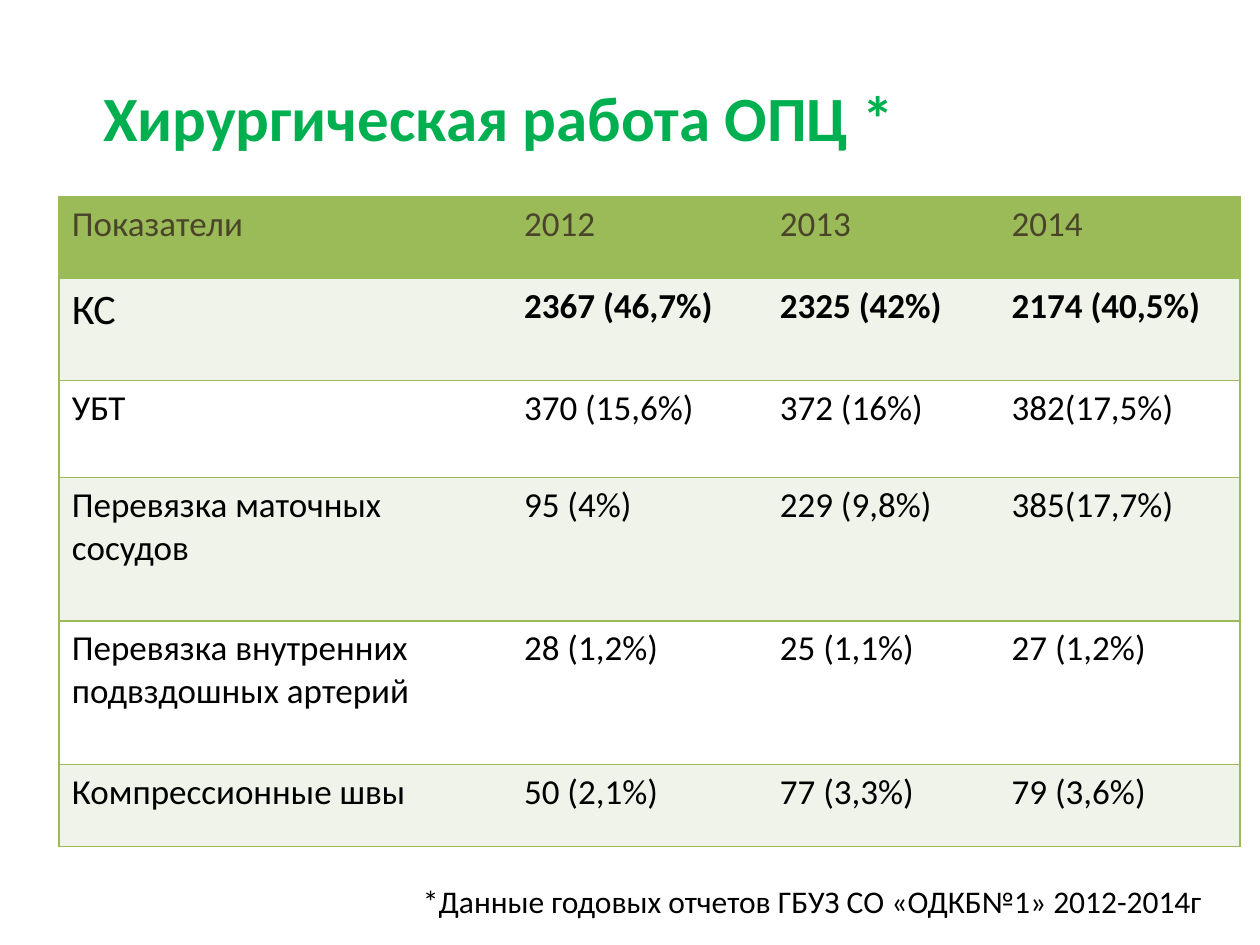
from lxml.etree import SubElement
from pptx import Presentation
from pptx.dml.color import RGBColor
from pptx.enum.text import MSO_ANCHOR, PP_ALIGN
from pptx.oxml.ns import qn
from pptx.util import Inches, Pt

TITLE_GREEN = RGBColor(0x00, 0xB0, 0x50)
TABLE_GREEN = RGBColor(0x9B, 0xBB, 0x59)
PALE_GREEN = RGBColor(0xEF, 0xF3, 0xEA)
HEADER_BROWN = RGBColor(0x4A, 0x45, 0x2A)
BLACK = RGBColor(0, 0, 0)
WHITE = RGBColor(255, 255, 255)

INDICATORS = [
    ("Показатели", "2012", "2013", "2014"),
    ("КС", "2367 (46,7%)", "2325 (42%)", "2174 (40,5%)"),
    ("УБТ", "370 (15,6%)", "372 (16%)", "382(17,5%)"),
    ("Перевязка маточных сосудов", "95 (4%)", "229 (9,8%)", "385(17,7%)"),
    ("Перевязка внутренних подвздошных артерий", "28 (1,2%)", "25 (1,1%)", "27 (1,2%)"),
    ("Компрессионные швы", "50 (2,1%)", "77 (3,3%)", "79 (3,6%)"),
]
COLUMN_WIDTHS = [3.59, 2.03, 1.84, 1.91]
ROW_HEIGHTS = [0.65, 0.81, 0.77, 1.14, 1.14, 0.65]


def write(frame, text, size=20, color=BLACK, bold=False, align=PP_ALIGN.LEFT):
    paragraph = frame.paragraphs[0]
    paragraph.alignment = align
    run = paragraph.add_run()
    run.text = text
    run.font.name = "Calibri"
    run.font.size = Pt(size)
    run.font.bold = bold
    run.font.color.rgb = color


class SlideBuilder:
    """Holds the border style and the slide being built."""

    def __init__(self, slide, border_color=TABLE_GREEN, border_width=1):
        self.slide = slide
        self.border_color = border_color
        self.border_width = border_width

    def title(self, text, left, top, width, height):
        heading = self.slide.shapes.title
        heading.left, heading.top = Inches(left), Inches(top)
        heading.width, heading.height = Inches(width), Inches(height)
        heading.text_frame.vertical_anchor = MSO_ANCHOR.MIDDLE
        write(heading.text_frame, text, size=36, color=TITLE_GREEN, bold=True,
              align=PP_ALIGN.CENTER)

    def borders(self, cell, visible_sides):
        properties = cell._tc.get_or_add_tcPr()
        for side in "LRTB":
            line = SubElement(properties, qn(f"a:ln{side}"), w=str(Pt(self.border_width)))
            if side in visible_sides:
                fill = SubElement(line, qn("a:solidFill"))
                SubElement(fill, qn("a:srgbClr"), val=str(self.border_color))
            else:
                SubElement(line, qn("a:noFill"))

    def table(self, rows, left, top, widths, heights):
        grid = self.slide.shapes.add_table(
            len(rows), len(widths), Inches(left), Inches(top),
            Inches(sum(widths)), Inches(sum(heights))).table
        for column, width in zip(grid.columns, widths):
            column.width = Inches(width)
        for r, (values, height) in enumerate(zip(rows, heights)):
            grid.rows[r].height = Inches(height)
            background = TABLE_GREEN if r == 0 else PALE_GREEN if r % 2 else WHITE
            for c, value in enumerate(values):
                cell = grid.cell(r, c)
                outer = "L" if c == 0 else "R" if c == len(widths) - 1 else ""
                self.borders(cell, "TB" + outer)
                cell.fill.solid()
                cell.fill.fore_color.rgb = background
                write(cell.text_frame, value,
                      size=24 if (r, c) == (1, 0) else 20,
                      color=HEADER_BROWN if r == 0 else BLACK,
                      bold=r == 1 and c > 0)

    def footnote(self, text, left, top, width, height):
        frame = self.slide.shapes.add_textbox(
            Inches(left), Inches(top), Inches(width), Inches(height)).text_frame
        frame.word_wrap = True
        frame.margin_right = Inches(0.15)
        write(frame, text, size=18, align=PP_ALIGN.RIGHT)


def main():
    presentation = Presentation()
    presentation.slide_width, presentation.slide_height = Inches(10), Inches(7.5)
    title_only = presentation.slide_layouts[5]
    builder = SlideBuilder(presentation.slides.add_slide(title_only))
    builder.title("Хирургическая работа ОПЦ *", 0.5, 0.3, 6.92, 1.25)
    builder.table(INDICATORS, 0.47, 1.56, COLUMN_WIDTHS, ROW_HEIGHTS)
    builder.footnote("*Данные годовых отчетов ГБУЗ СО «ОДКБ№1» 2012-2014г",
                     2.42, 6.95, 7.27, 0.4)
    presentation.save("out.pptx")


if __name__ == "__main__":
    main()
